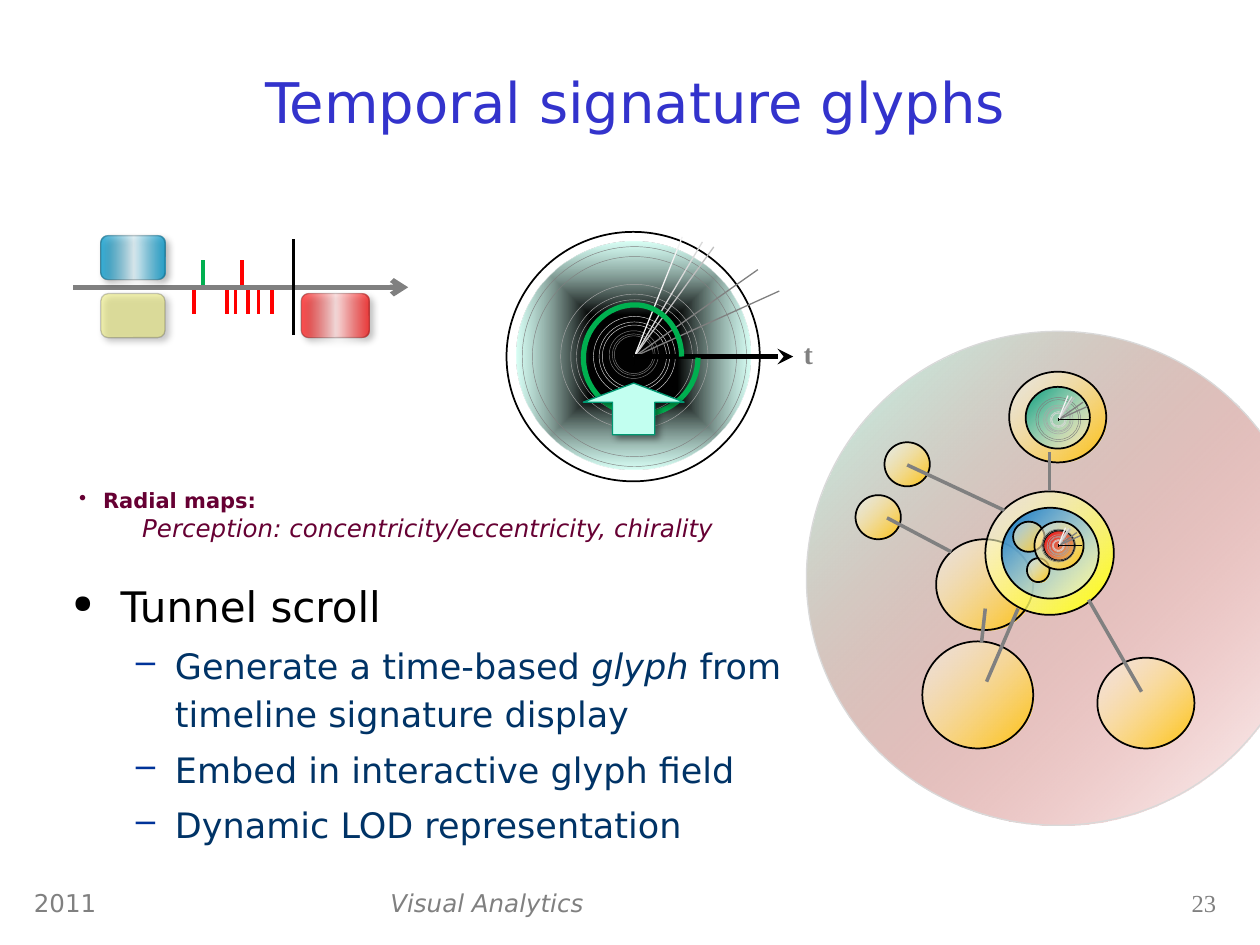
"""Build a slide on temporal signature glyphs with a timeline, radial maps and a glyph field."""
from math import cos, pi, sin

from lxml import etree
from pptx import Presentation
from pptx.dml.color import RGBColor
from pptx.enum.shapes import MSO_CONNECTOR, MSO_SHAPE
from pptx.enum.text import MSO_ANCHOR, PP_ALIGN
from pptx.oxml import parse_xml
from pptx.oxml.ns import nsdecls, qn
from pptx.util import Inches, Pt

ELLIPSE, ROUNDED, UP_ARROW = MSO_SHAPE.OVAL, MSO_SHAPE.ROUNDED_RECTANGLE, MSO_SHAPE.UP_ARROW
STRAIGHT = MSO_CONNECTOR.STRAIGHT
TOP, BOTTOM = MSO_ANCHOR.TOP, MSO_ANCHOR.BOTTOM
LEFT, CENTER, RIGHT = PP_ALIGN.LEFT, PP_ALIGN.CENTER, PP_ALIGN.RIGHT
SANS, SERIF = "DejaVu Sans", "Times New Roman"

COLORS = {
    "black": "000000", "white": "FFFFFF", "gray": "808080", "silver": "A6A6A6",
    "ash": "BFBFBF", "light": "D9D9D9", "pale": "F2F2F2", "mint": "C2FFF0",
    "teal": "009973", "green": "00B050", "red": "FF0000", "dark red": "C00000",
    "cyan": "0099CC", "khaki": "EBEB79", "amber": "FFC000", "yellow": "FFFF00",
    "blue": "0070C0", "title": "3333CC", "navy": "003366", "dash": "003399", "plum": "660033",
}
GRADIENTS = {
    "tunnel": ([(35, "black", 100), (100, "mint", 63)], None),
    "event": ([(0, "cyan", 80), (49, "cyan", 10), (100, "cyan", 80)], 180),
    "alert": ([(0, "red", 70), (50, "red", 10), (100, "red", 70)], 0),
    "note": ([(0, "khaki", 57), (100, "khaki", 57)], 0),
    "field": ([(0, "mint", 100), (100, "dark red", 0)], 45),
    "node": ([(0, "amber", 95), (100, "white", 47)], 225),
    "focus": ([(0, "yellow", 100), (100, "white", 47)], 225),
    "core": ([(0, "blue", 100), (100, "white", 47)], 45),
    "calm": ([(0, "teal", 100), (100, "white", 50)], 45),
    "hot": ([(0, "red", 100), (100, "dark red", 0)], 45),
}

presentation = Presentation()
presentation.slide_width, presentation.slide_height = Inches(10), Inches(7.5)
CELL = presentation.slide_width // 100
slide = presentation.slides.add_slide(presentation.slide_layouts[6])
shapes = slide.shapes


def draw_shape(kind, box, fill=None, line=None, width=0.25, shadow=False):
    shape = shapes.add_shape(kind, *[round(value * CELL) for value in box])
    shape.shadow.inherit = False
    shape.fill.background()
    properties = shape._element.spPr
    if fill in GRADIENTS:
        stops, angle = GRADIENTS[fill]
        stop_xml = "".join(
            f'<a:gs pos="{position * 1000}"><a:srgbClr val="{COLORS[color]}">'
            f'<a:alpha val="{alpha * 1000}"/></a:srgbClr></a:gs>' for position, color, alpha in stops)
        direction = f'<a:lin ang="{(angle or 0) * 60000}" scaled="0"/>'
        if angle is None:
            direction = '<a:path path="shape"><a:fillToRect l="50000" t="50000" r="50000" b="50000"/></a:path>'
        gradient = parse_xml(f'<a:gradFill {nsdecls("a")} rotWithShape="1"><a:gsLst>{stop_xml}</a:gsLst>'
                             f'{direction}</a:gradFill>')
        properties.replace(properties.find(qn("a:noFill")), gradient)
    elif fill:
        shape.fill.solid()
        shape.fill.fore_color.rgb = RGBColor.from_string(COLORS[fill])
    if line:
        shape.line.color.rgb = RGBColor.from_string(COLORS[line])
        shape.line.width = Pt(width)
    else:
        shape.line.fill.background()
    if shadow:
        properties.find(qn("a:effectLst")).append(parse_xml(
            f'<a:outerShdw {nsdecls("a")} blurRad="50800" dist="38100" dir="2700000" algn="tl" rotWithShape="0">'
            f'<a:srgbClr val="{COLORS["black"]}"><a:alpha val="40000"/></a:srgbClr></a:outerShdw>'))
    return shape


def draw_line(start, end, color, width, head=None):
    connector = shapes.add_connector(STRAIGHT, *[round(value * CELL) for value in (*start, *end)])
    connector.line.color.rgb = RGBColor.from_string(COLORS[color])
    connector.line.width = Pt(width)
    if head:
        etree.SubElement(connector.line._get_or_add_ln(), qn("a:tailEnd"), type=head)
    etree.SubElement(connector._element.spPr, qn("a:effectLst"))


draw_shape(ELLIPSE, (41, 19.2, 18.6, 18.1), "tunnel")
for diameter in (3.9, 3.4, 3.1):
    draw_shape(ELLIPSE, (50.3 - diameter / 2, 28.2 - diameter / 2, diameter, diameter * 0.97), line="gray")

heading = {"size": Pt(24), "name": SANS}
detail = {"size": Pt(20), "name": SANS}
footer = {"size": Pt(14), "name": SANS}
dash = {"level": 1, "line_spacing": 1.15, "space_before": Pt(4)}
dash_bullet = ("–", 100, "dash")
TEXTS = [
    ((8.3, 2.9, 84.3, 8.3), BOTTOM, [
        ({"alignment": CENTER}, 0, 0, None, "title", [("Temporal signature glyphs", {"size": Pt(32), "name": SANS})])]),
    ((4.8, 45, 58.8, 24.5), TOP, [
        ({"line_spacing": 1.15}, 0.38, -0.38, ("●", 60, "black"), "black", [("Tunnel scroll", heading)]),
        (dash, 0.81, -0.31, dash_bullet, "navy", [
            ("Generate a time-based ", detail), ("glyph", {**detail, "italic": True}),
            (" from timeline signature display", detail)]),
        (dash, 0.81, -0.31, dash_bullet, "navy", [("Embed in interactive glyph field", detail)]),
        (dash, 0.81, -0.31, dash_bullet, "navy", [("Dynamic LOD representation", detail)])]),
    ((1.7, 70, 25.8, 3.3), TOP, [({"alignment": LEFT}, 0, 0, None, "gray", [("2011", footer)])]),
    ((30, 70, 44.2, 3.3), TOP, [
        ({"alignment": LEFT}, 0, 0, None, "gray", [("Visual Analytics", {**footer, "italic": True})])]),
    ((85.8, 70, 11.7, 3.3), TOP, [
        ({"alignment": RIGHT}, 0, 0, None, "gray", [("23", {"size": Pt(14), "name": SERIF})])]),
    ((5.3, 38.2, 54.3, 5.4), TOP, [
        ({}, 0.19, -0.19, ("•", 100, "plum"), "plum", [
            ("Radial maps:", {"size": Pt(12), "name": SANS, "bold": True})]),
        ({"level": 1}, 0.5, 0, None, "plum", [
            ("Perception: concentricity/eccentricity, chirality", {**footer, "italic": True})])]),
    ((62.4, 26.2, 3.5, 3.7), TOP, [
        ({"alignment": CENTER}, 0, 0, None, "gray", [("t", {"size": Pt(16), "name": SERIF, "bold": True})])]),
]
for box, anchor, paragraphs in TEXTS:
    frame = shapes.add_textbox(*[round(value * CELL) for value in box]).text_frame
    frame.word_wrap = True
    frame.vertical_anchor = anchor
    for index, (layout, margin, indent, bullet, color, runs) in enumerate(paragraphs):
        paragraph = frame.add_paragraph() if index else frame.paragraphs[0]
        for name, value in layout.items():
            setattr(paragraph, name, value)
        properties = paragraph._p.get_or_add_pPr()
        properties.set("marL", str(Inches(margin)))
        properties.set("indent", str(Inches(indent)))
        if bullet:
            character, percent, bullet_color = bullet
            bullet_fill = etree.SubElement(properties, qn("a:buClr"))
            etree.SubElement(bullet_fill, qn("a:srgbClr"), val=COLORS[bullet_color])
            etree.SubElement(properties, qn("a:buSzPct"), val=str(percent * 1000))
            etree.SubElement(properties, qn("a:buChar"), char=character)
        for text, formats in runs:
            run = paragraph.add_run()
            run.text = text
            run.font.color.rgb = RGBColor.from_string(COLORS[color])
            for name, value in formats.items():
                setattr(run.font, name, value)

for column in (15.4, 18, 18.7, 19.7, 20.5, 21.6):
    draw_line((column, 24.9), (column, 22.7), "red", 2)
for column, color in ((16.1, "green"), (19.2, "red")):
    draw_line((column, 22.7), (column, 20.6), color, 2)
draw_line((5.8, 22.8), (32.4, 22.8), "gray", 3, "arrow")
draw_line((23.3, 26.6), (23.3, 19), "black", 2)
for left, top, width, fill in ((8, 18.7, 5.1, "event"), (23.9, 23.3, 5.4, "alert"), (8, 23.3, 5.1, "note")):
    card = draw_shape(ROUNDED, (left, top, width, 3.5), fill, "black", 0.75, True)
    outline = card.line._get_or_add_ln().find(".//" + qn("a:srgbClr"))
    etree.SubElement(outline, qn("a:alpha"), val="20000")

draw_shape(ELLIPSE, (64, 26.3, 39.9, 39.2), "field", "light", 0.75)
for box in ((67.9, 39.3, 3.6, 3.5), (70.2, 35.1, 3.6, 3.5), (80.1, 29.5, 7.7, 7.2),
            (74.3, 42.8, 7.7, 7.2), (87.1, 52.2, 7.7, 7.2), (73.2, 50.9, 8.8, 8.5)):
    draw_shape(ELLIPSE, box, "node", "black", 1)
draw_shape(ELLIPSE, (78.2, 39, 10.2, 9.8), "focus", "black", 1)
for start, end in (((83.3, 39), (83.3, 35.9)), ((78.3, 54.1), (80.8, 48.3)), ((90.6, 54.9), (86.4, 47.6)),
                   ((79.7, 40.5), (72, 36.9)), ((75.5, 43.8), (70.4, 41.1)), ((77.9, 51), (78.2, 48.3))):
    draw_line(start, end, "gray", 2)
draw_shape(ELLIPSE, (79.5, 40.3, 7.7, 7.2), "core", "black", 1)

RINGS = [(17.8, "gray"), (16.2, "gray"), (11.7, "silver"), (10.1, "silver"), (9.2, "silver"),
         (6.5, "light"), (5.6, "light"), (5.1, "light")]
RAYS = [(11.5, -5.2, "gray"), (9.8, -6.9, "gray"), (6.3, -8.7, "ash"), (5.4, -9.1, "light"), (3.8, -9.5, "pale")]
GLYPHS = [
    (84, 33.3, 0.2, 0.75, None, [((81.4, 30.7, 5.1, 4.9), "calm")]),
    (84, 43.3, 0.15, 0.75, None, [
        ((80.4, 41.4, 2.5, 2.4), "node"), ((81.5, 44.3, 1.8, 1.9), "node"),
        ((82.1, 41.4, 3.9, 3.8), "node"), ((82.8, 42.1, 2.5, 2.4), "hot")]),
    (50.35, 28.3, 1, 3, "stealth", [((40.2, 18.4, 20.1, 19.8), None)]),
]
for x, y, scale, axis_width, head, discs in GLYPHS:
    for box, fill in discs:
        draw_shape(ELLIPSE, box, fill, "black", 1)
    for diameter, color in RINGS:
        width, height = diameter * scale, diameter * scale * 0.98
        draw_shape(ELLIPSE, (x - width / 2, y - height / 2, width, height), line=color)
    for across, down, color in RAYS:
        draw_line((x, y), (x + across * scale, y + down * scale), color, 0.75)
    draw_line((x, y - 0.65 * scale), (x, y + 0.65 * scale), "black", 0.75)
    draw_line((x, y), (x + 12.6 * scale, y), "black", axis_width, head)

QUARTERS = [(50.85, 28.4, 4.55, 4.5), (50.85, 28.4, 4.55, 4.5), (50.4, 28.4, 4.1, 4.2), (50.4, 28.3, 3.7, 4.1)]
STEPS = 16
spiral = [((x + across * cos(angle)) * CELL, (y + down * sin(angle)) * CELL)
          for quarter, (x, y, across, down) in enumerate(QUARTERS)
          for angle in [(quarter + step / STEPS) * pi / 2 for step in range(STEPS + 1)]]
builder = shapes.build_freeform(*spiral[0])
builder.add_line_segments(spiral[1:], close=False)
trace = builder.convert_to_shape()
trace.shadow.inherit = False
trace.fill.background()
trace.line.color.rgb = RGBColor.from_string(COLORS["green"])
trace.line.width = Pt(3)

pointer = draw_shape(UP_ARROW, (46.3, 30.4, 8, 4.1), "mint", "teal", 0.75, True)
pointer.adjustments[0], pointer.adjustments[1] = 0.42, 0.37

presentation.save("out.pptx")
